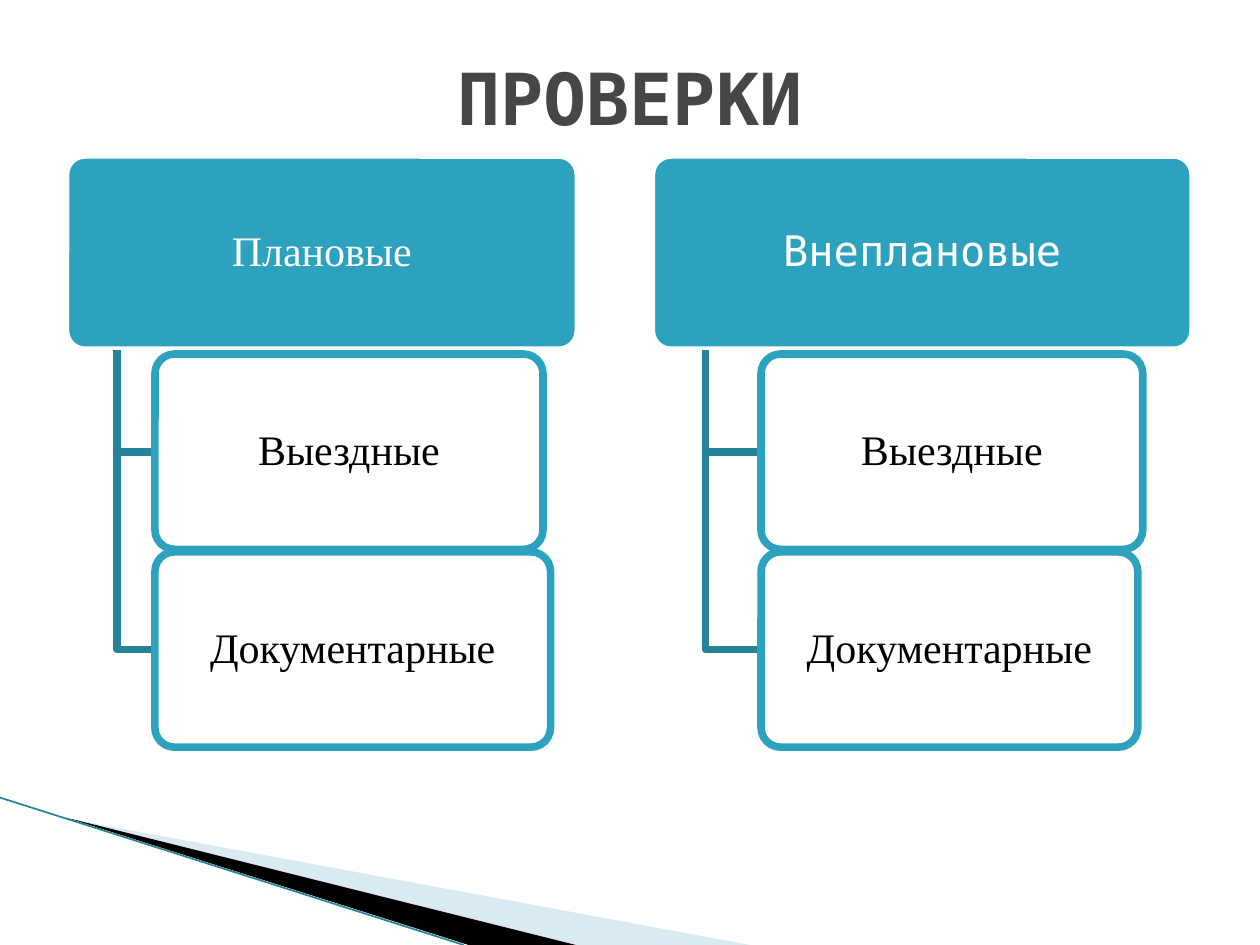
from pptx import Presentation
from pptx.dml.color import RGBColor
from pptx.enum.shapes import MSO_CONNECTOR, MSO_SHAPE
from pptx.enum.text import MSO_ANCHOR, PP_ALIGN
from pptx.oxml.ns import qn
from pptx.util import Inches, Pt
from lxml import etree

ROUND = MSO_SHAPE.ROUNDED_RECTANGLE
STRAIGHT = MSO_CONNECTOR.STRAIGHT
MIDDLE = MSO_ANCHOR.MIDDLE
CENTER = PP_ALIGN.CENTER

WHITE = RGBColor(0xFF, 0xFF, 0xFF)
BLACK = RGBColor(0, 0, 0)
TEAL = RGBColor(0x2D, 0xA2, 0xBF)
DARK = RGBColor(0x24, 0x82, 0x99)
PALE = RGBColor(0xA0, 0xCB, 0xDC)
GRAY = RGBColor(0x46, 0x46, 0x46)
SERIF = "Times New Roman"
MONO = "DejaVu Sans Mono"

STROKE = Pt(4.33)
TOP, HIGH = 1.23, 1.55
HEAD_END = TOP + HIGH
ROWS = (2.81, 4.38)

# head text, font, left, width; stem x; child left; children (text, width)
TREES = (
    ("Плановые", SERIF, 0.52, 4.07, 0.93, 1.23,
     (("Выездные", 3.08), ("Документарные", 3.14))),
    ("Внеплановые", MONO, 5.17, 4.3, 5.6, 6.04,
     (("Выездные", 3.03), ("Документарные", 2.99))),
)


class Deck:
    def __init__(self):
        self.prs = Presentation()
        self.prs.slide_width = Inches(10)
        self.prs.slide_height = Inches(7.5)
        self.slide = self.prs.slides.add_slide(self.prs.slide_layouts[6])
        self.shapes = self.slide.shapes

    def paint(self, shape, color, alpha=100):
        """Fill a shape; alpha is its opacity in percent."""
        shape.fill.solid()
        shape.fill.fore_color.rgb = color
        if alpha < 100:
            clr = shape._element.spPr.find(qn("a:solidFill"))[0]
            etree.SubElement(clr, qn("a:alpha"), val=str(alpha * 1000))

    def label(self, shape, text, font, size, color, bold=False):
        frame = shape.text_frame
        frame.word_wrap = True
        frame.vertical_anchor = MIDDLE
        frame.text = text
        para = frame.paragraphs[0]
        para.alignment = CENTER
        style = para.runs[0].font
        style.name, style.size, style.bold = font, Pt(size), bold
        style.color.rgb = color
        return frame

    def title(self, text):
        box = self.shapes.add_textbox(
            Inches(0.5), Inches(0.3), Inches(9), Inches(0.93))
        self.label(box, text, MONO, 41, GRAY, True)

    def box(self, text, left, top, width, font, ink, fill, edge, alpha=100):
        shape = self.shapes.add_shape(
            ROUND, Inches(left), Inches(top), Inches(width), Inches(HIGH))
        shape.adjustments[0] = 0.1
        shape.shadow.inherit = False
        self.paint(shape, fill, alpha)
        shape.line.color.rgb = edge
        shape.line.width = STROKE
        frame = self.label(shape, text, font, 24, ink)
        frame.margin_left = frame.margin_right = Inches(0.05)
        frame.margin_top = frame.margin_bottom = Inches(0.03)
        frame.paragraphs[0].line_spacing = 0.9

    def free(self, points, close):
        first, *rest = [(Inches(x), Inches(y)) for x, y in points]
        pen = self.shapes.build_freeform(*first)
        pen.add_line_segments(rest, close=close)
        shape = pen.convert_to_shape()
        shape.shadow.inherit = False
        return shape

    def wedge(self, points, color, alpha=100):
        shape = self.free(points, True)
        self.paint(shape, color, alpha)
        shape.line.fill.background()

    def elbow(self, x, y, end_x, end_y):
        shape = self.free([(x, y), (x, end_y), (end_x, end_y)], False)
        shape.fill.background()
        shape.line.color.rgb = DARK
        shape.line.width = STROKE

    def line(self, x, y, end_x, end_y):
        line = self.shapes.add_connector(
            STRAIGHT, Inches(x), Inches(y), Inches(end_x), Inches(end_y))
        line.line.color.rgb = DARK
        line.line.width = Pt(0.95)
        etree.SubElement(line._element.spPr, qn("a:effectLst"))

    def tree(self, text, font, left, width, stem, child, kids):
        self.box(text, left, TOP, width, font, WHITE, TEAL, WHITE)
        for top, (name, wide) in zip(ROWS, kids):
            self.elbow(stem, HEAD_END, child, top + HIGH / 2)
            self.box(name, child, top, wide, SERIF, BLACK, WHITE, TEAL, 90)


def main():
    deck = Deck()
    deck.wedge([(0.55, 6.5), (5.95, 7.5), (4.56, 7.5)], PALE, 40)
    deck.wedge([(0.53, 6.49), (4.57, 7.5), (3.72, 7.5)], BLACK)
    deck.line(0, 6.33, 3.68, 7.5)
    for tree in TREES:
        deck.tree(*tree)
    deck.title("ПРОВЕРКИ")
    deck.prs.save("out.pptx")


if __name__ == "__main__":
    main()
